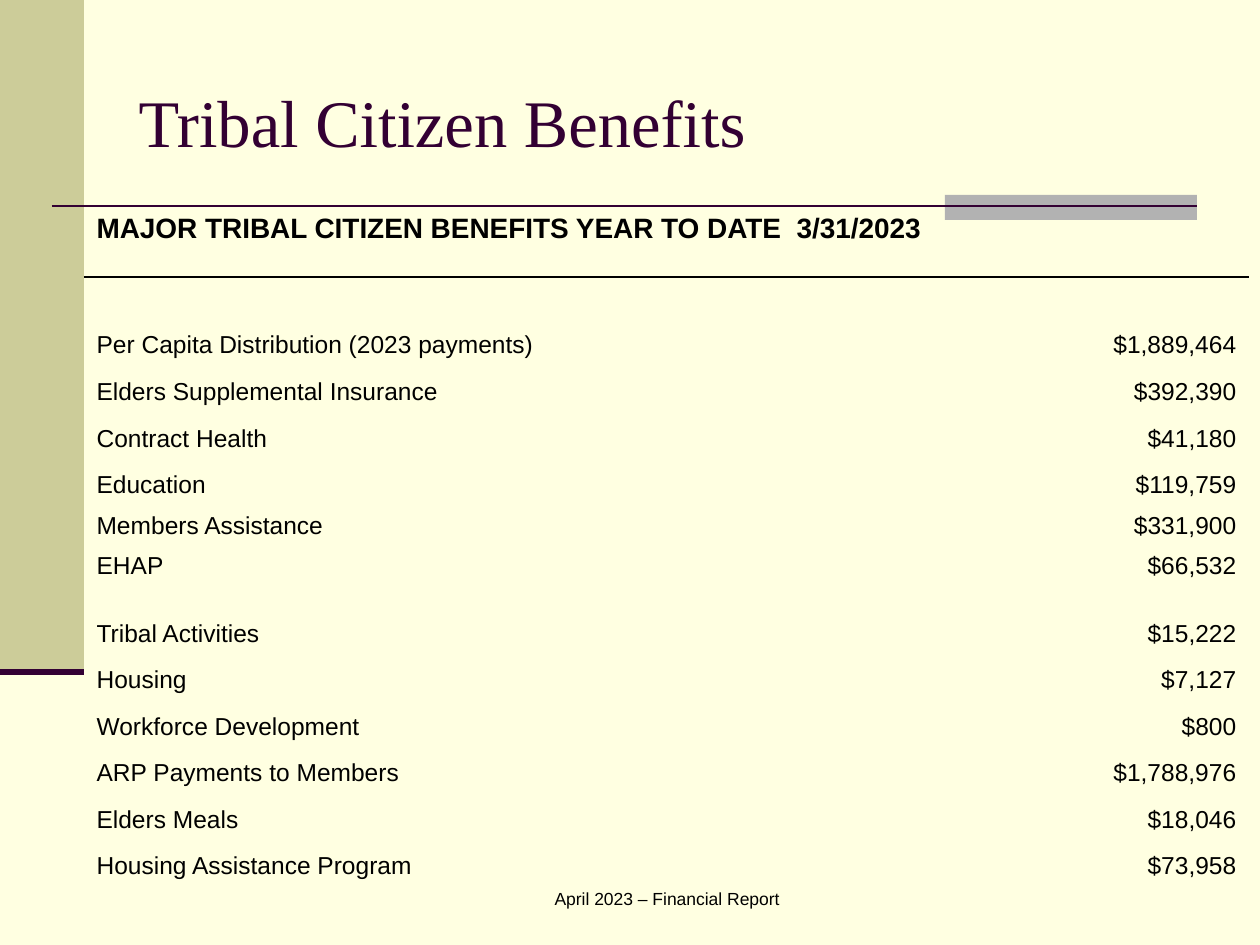
from lxml import etree
from pptx import Presentation
from pptx.dml.color import RGBColor
from pptx.enum.shapes import MSO_CONNECTOR, MSO_SHAPE
from pptx.enum.text import MSO_ANCHOR, PP_ALIGN
from pptx.oxml.ns import qn
from pptx.util import Pt

LINE = MSO_CONNECTOR.STRAIGHT
RECT = MSO_SHAPE.RECTANGLE
MID, BOTTOM = MSO_ANCHOR.MIDDLE, MSO_ANCHOR.BOTTOM
LEFT, MID_X, RIGHT = PP_ALIGN.LEFT, PP_ALIGN.CENTER, PP_ALIGN.RIGHT
PX = 914400 // 126


def hue(code):
    return RGBColor.from_string(code)


def write(frame, text, size, align=LEFT, face="Arial", code="000000", bold=False):
    para = frame.paragraphs[0]
    para.alignment = align
    run = para.add_run()
    run.text = text
    run.font.name = face
    run.font.size = Pt(size)
    run.font.bold = bold
    run.font.color.rgb = hue(code)


deck = Presentation()
deck.slide_width = 1260 * PX
deck.slide_height = 945 * PX
slide = deck.slides.add_slide(deck.slide_layouts[5])
slide.background.fill.solid()
slide.background.fill.fore_color.rgb = hue("FFFFE1")
shapes = slide.shapes

for x, y, w, h, code in [(0, 0, 84, 672, "CCCC99"), (945, 195, 252, 25, "B2B2B2")]:
    bar = shapes.add_shape(RECT, x * PX, y * PX, w * PX, h * PX)
    bar.shadow.inherit = False
    bar.fill.solid()
    bar.fill.fore_color.rgb = hue(code)
    bar.line.fill.background()

for x, end, y, width in [(52, 1197, 206, 1.5), (0, 84, 672, 3.5)]:
    rule = shapes.add_connector(LINE, x * PX, y * PX, end * PX, y * PX)
    rule.line.color.rgb = hue("330033")
    rule.line.width = Pt(width)
    etree.SubElement(rule._element.spPr, qn("a:effectLst"))

title = shapes.title
title.left, title.top = 126 * PX, 42 * PX
title.width, title.height = 1071 * PX, 157 * PX
title.text_frame.vertical_anchor = MID
write(title.text_frame, "Tribal Citizen Benefits", 38, face="Times New Roman", code="330033")

items = [
    ("Per Capita Distribution (2023 payments)", "$1,889,464", 46),
    ("Elders Supplemental Insurance", "$392,390", 47),
    ("Contract Health", "$41,180", 47),
    ("Education", "$119,759", 46),
    ("Members Assistance", "$331,900", 41),
    ("EHAP", "$66,532", 40),
    ("Tribal Activities", "$15,222", 68),
    ("Housing", "$7,127", 46),
    ("Workforce Development", "$800", 47),
    ("ARP Payments to Members", "$1,788,976", 46),
    ("Elders Meals", "$18,046", 47),
    ("Housing Assistance Program", "$73,958", 46),
]
rows = [("", "", 109), ("", "", 42), *items, ("", "", 46)]
total = sum(row[2] for row in rows)
table = shapes.add_table(len(rows), 2, 84 * PX, 168 * PX, 1165 * PX, total * PX).table
table.first_row = False
table.horz_banding = False
style = table._tbl.tblPr.find(qn("a:tableStyleId"))
style.text = "{2D5ABB26-0587-4C30-8999-92F81FD0307C}"
table.columns[0].width = 746 * PX
table.columns[1].width = 419 * PX

for r, (label, amount, high) in enumerate(rows):
    table.rows[r].height = high * PX
    for c, (text, align) in enumerate([(label, LEFT), (amount, RIGHT)]):
        cell = table.cell(r, c)
        cell.vertical_anchor = BOTTOM
        if text:
            write(cell.text_frame, text, 14, align)
        else:
            cell.margin_top = cell.margin_bottom = 0
        if r == 0:
            edge = etree.SubElement(cell._tc.get_or_add_tcPr(), qn("a:lnB"), w=str(Pt(1)))
            paint = etree.SubElement(edge, qn("a:solidFill"))
            etree.SubElement(paint, qn("a:srgbClr"), val="000000")
        cell.fill.background()

head = table.cell(0, 0)
head.merge(table.cell(0, 1))
head.margin_bottom = 33 * PX
write(head.text_frame, "MAJOR TRIBAL CITIZEN BENEFITS YEAR TO DATE  3/31/2023", 16, bold=True)

foot = shapes.add_textbox(462 * PX, 882 * PX, 410 * PX, 42 * PX).text_frame
foot.word_wrap = True
write(foot, "April 2023 – Financial Report", 10, MID_X)

deck.save("out.pptx")
